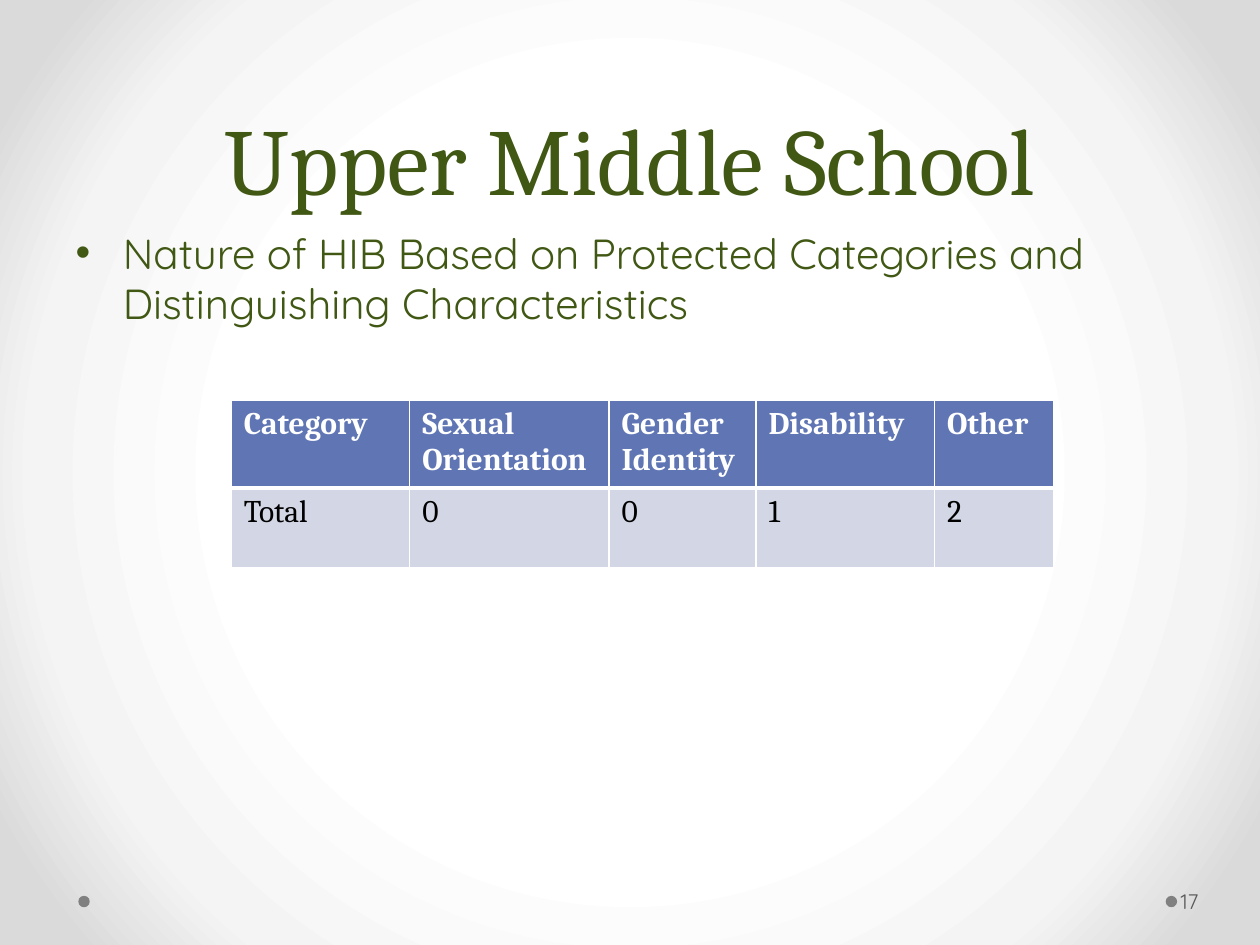
import pptx
import pptx.util
import pptx.dml.color
import pptx.enum.shapes
import pptx.enum.text
import pptx.oxml
import pptx.oxml.ns

Cm = pptx.util.Cm
Pt = pptx.util.Pt
ANCHOR = pptx.enum.text.MSO_ANCHOR
ALIGN = pptx.enum.text.PP_ALIGN

COLORS = {"green": "405814", "dot": "808080", "number": "595959", "header": "6076B4",
          "row": "D2D6E5", "white": "FFFFFF", "black": "000000"}
GLOW = [(50, "FFFFFF"), (76, "F4F4F4"), (92, "DADADA")]
HEADING, BODY = "Cambria", "Quicksand"
ROWS = [["Category", "Sexual Orientation", "Gender Identity", "Disability", "Other"],
        ["Total", "0", "0", "1", "2"]]
COL_WIDTHS = [3.6, 4.02, 2.96, 3.6, 2.4]
ROW_HEIGHTS = [1.69, 1.6]


def rgb(name):
    return pptx.dml.color.RGBColor.from_string(COLORS[name])


def parse(tag, inner, attrs=""):
    ns = pptx.oxml.ns.nsdecls("a")
    return pptx.oxml.parse_xml(f"<a:{tag} {ns} {attrs}>{inner}</a:{tag}>")


def set_attrs(obj, values):
    for name, value in values.items():
        setattr(obj, name, value)


def write(tf, text, size, font, color, bold=False):
    """Put one run of formatted text in a frame and return its paragraph."""
    p = tf.paragraphs[0]
    r = p.add_run()
    r.text = text
    set_attrs(r.font, {"size": Pt(size), "name": font, "bold": bold})
    r.font.color.rgb = rgb(color)
    return p


def place(sp, left, top, width, height):
    set_attrs(sp, {"left": Cm(left), "top": Cm(top), "width": Cm(width), "height": Cm(height)})


def set_background(s):
    """Fill the background with a glow that darkens outwards from the centre."""
    s.background.fill.gradient()
    grad = s.background._cSld.find(".//" + pptx.oxml.ns.qn("a:gradFill"))
    for child in list(grad):
        grad.remove(child)
    stops = "".join(f'<a:gs pos="{pos * 1000}"><a:srgbClr val="{color}"/></a:gs>'
                    for pos, color in GLOW)
    grad.append(parse("gsLst", stops))
    grad.append(parse("path", '<a:fillToRect l="50000" t="50000" r="50000" b="50000"/>',
                      'path="circle"'))


def add_dot(s, left):
    sp = s.shapes.add_shape(pptx.enum.shapes.MSO_SHAPE.OVAL,
                            Cm(left), Cm(18.06), Cm(0.23), Cm(0.23))
    sp.shadow.inherit = False
    sp.fill.solid()
    sp.fill.fore_color.rgb = rgb("dot")
    sp.line.fill.background()


def add_title(s, text):
    sp = s.shapes.title
    place(sp, 1.27, 0, 22.86, 4.45)
    sp.text_frame.vertical_anchor = ANCHOR.BOTTOM
    p = write(sp.text_frame, text, 54, HEADING, "green")
    set_attrs(p, {"alignment": ALIGN.CENTER, "line_spacing": Pt(58)})


def add_body(s, text):
    sp = s.placeholders[1]
    place(sp, 1.27, 4.45, 22.86, 12.57)
    write(sp.text_frame, text, 24, BODY, "green")


def add_page_number(s, text):
    tf = s.shapes.add_textbox(Cm(23.72), Cm(17.65), Cm(1.55), Cm(1.02)).text_frame
    set_attrs(tf, {"word_wrap": True, "vertical_anchor": ANCHOR.MIDDLE,
                   "margin_left": Cm(0.08), "margin_right": Cm(0.13)})
    write(tf, text, 12, BODY, "number")


def set_borders(cell, widths):
    """Draw white borders; widths holds points by side, in schema order."""
    line = f'<a:solidFill><a:srgbClr val="{COLORS["white"]}"/></a:solidFill>'
    tc_pr = cell._tc.get_or_add_tcPr()
    for i, (side, width) in enumerate(widths.items()):
        tc_pr.insert(i, parse("ln" + side, line, f'w="{Pt(width)}"'))


def add_table(s):
    table = s.shapes.add_table(len(ROWS), len(COL_WIDTHS), Cm(4.66), Cm(8.06),
                               Cm(sum(COL_WIDTHS)), Cm(sum(ROW_HEIGHTS))).table
    for col, width in zip(table.columns, COL_WIDTHS):
        col.width = Cm(width)
    for i, (texts, height) in enumerate(zip(ROWS, ROW_HEIGHTS)):
        header = i == 0
        table.rows[i].height = Cm(height)
        for j, text in enumerate(texts):
            cell = table.cell(i, j)
            cell.fill.solid()
            cell.fill.fore_color.rgb = rgb("header" if header else "row")
            write(cell.text_frame, text, 18, HEADING, "white" if header else "black", header)
            set_borders(cell, {"L": 1, "R": 1, "T": 1 if header else 3, "B": 3 if header else 1})


def main():
    prs = pptx.Presentation()
    set_attrs(prs, {"slide_width": Cm(25.4), "slide_height": Cm(19.05)})
    s = prs.slides.add_slide(prs.slide_layouts[1])
    set_background(s)
    for left in (23.5, 1.58):
        add_dot(s, left)
    add_title(s, "Upper Middle School")
    add_body(s, "Nature of HIB Based on Protected Categories and Distinguishing Characteristics")
    add_page_number(s, "17")
    add_table(s)
    prs.save("out.pptx")


if __name__ == "__main__":
    main()
